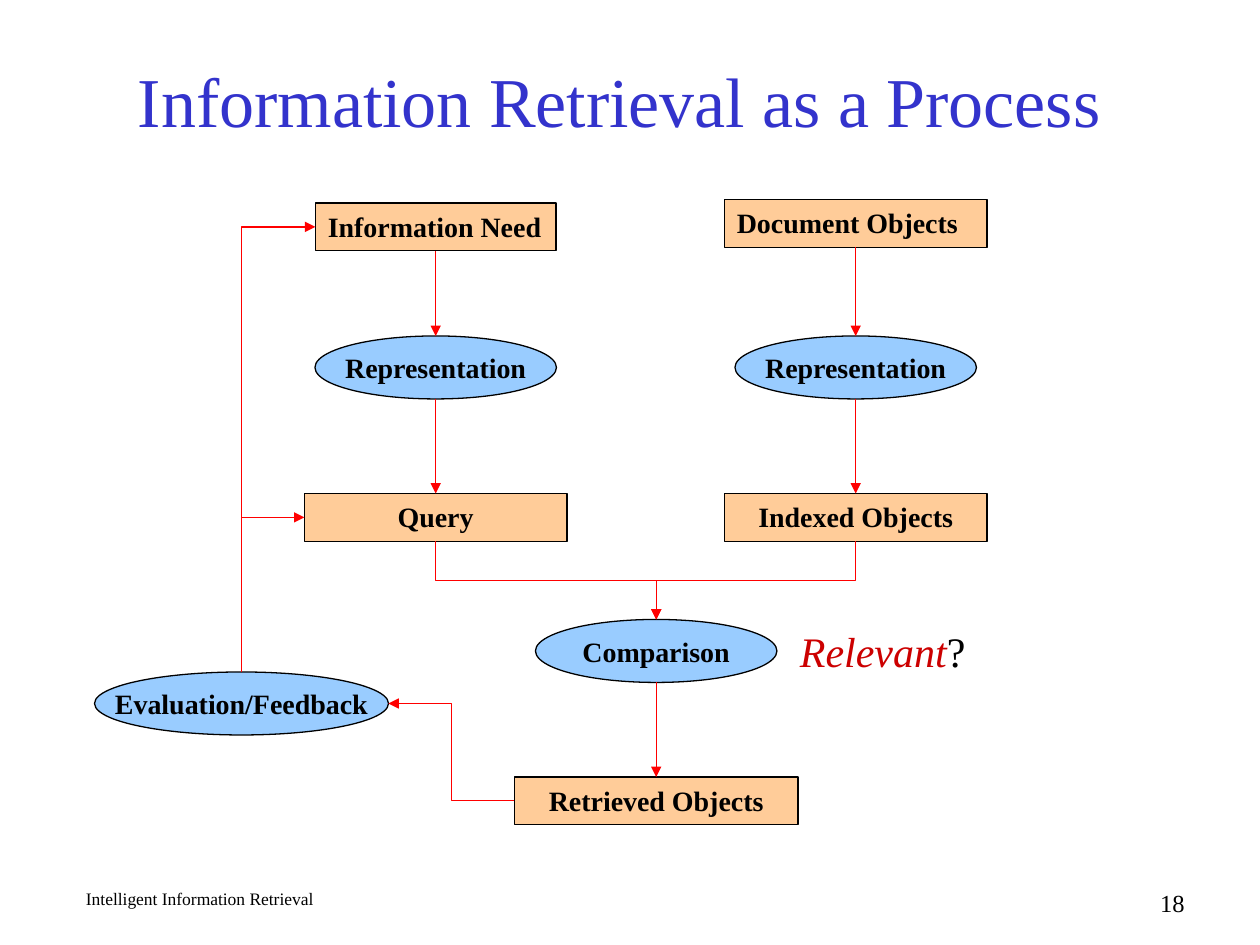
from dataclasses import dataclass
from pptx import Presentation, util as u
from pptx.dml.color import RGBColor
from pptx.enum import shapes as es, text as et
from pptx.oxml.ns import qn
from lxml import etree

Pt = u.Pt
LEFT, MID, RIGHT = et.PP_ALIGN.LEFT, et.PP_ALIGN.CENTER, et.PP_ALIGN.RIGHT


@dataclass(frozen=True)
class Theme:
    font: str = "Times New Roman"
    ink: str = "000000"
    head: str = "3333CC"
    box: str = "FFCC99"
    oval: str = "99CCFF"
    line: str = "FF0000"
    key: str = "CC0000"
    big: int = 40
    note: int = 24
    label: int = 16
    page: int = 14
    foot: int = 10
    edge: float = 0.75


T = Theme()


def rgb(code):
    return RGBColor.from_string(code)


def write(shape, runs, size=T.label, color=T.ink, bold=False, align=LEFT,
          anchor=et.MSO_ANCHOR.TOP, wrap=True):
    frame = shape.text_frame
    frame.word_wrap = wrap
    frame.vertical_anchor = anchor
    para = frame.paragraphs[0]
    para.alignment = align
    if isinstance(runs, str):
        runs = [(runs, color, False)]
    for words, tint, slant in runs:
        run = para.add_run()
        run.text = words
        font = run.font
        font.name, font.size = T.font, Pt(size)
        font.bold, font.italic = bold, slant
        font.color.rgb = rgb(tint)


def label(slide, runs, x, y, w, h, **form):
    write(slide.shapes.add_textbox(Pt(x), Pt(y), Pt(w), Pt(h)), runs, **form)


def node(slide, kind, words, fill, mid, y, w, h, **form):
    shape = slide.shapes.add_shape(kind, Pt(mid - w / 2), Pt(y), Pt(w), Pt(h))
    shape.shadow.inherit = False
    shape.fill.solid()
    shape.fill.fore_color.rgb = rgb(fill)
    shape.line.color.rgb = rgb(T.ink)
    shape.line.width = Pt(T.edge)
    write(shape, words, bold=True, **form)
    return shape


def box(slide, words, mid, y, w=150, align=MID):
    return node(slide, es.MSO_SHAPE.RECTANGLE, words, T.box, mid, y, w, 27.3,
                align=align)


def oval(slide, words, mid, y, w=138):
    return node(slide, es.MSO_SHAPE.OVAL, words, T.oval, mid, y, w, 36,
                align=MID, anchor=et.MSO_ANCHOR.MIDDLE, wrap=False)


def port(shape, side):
    across, down = {"top": (1, 0), "base": (1, 2),
                    "left": (0, 1), "right": (2, 1)}[side]
    return (shape.left + shape.width * across // 2,
            shape.top + shape.height * down // 2)


def stand(link, start, end):
    (x1, y1), (x2, y2) = start, end
    wide, tall = abs(y2 - y1), abs(x2 - x1)
    link.left, link.top = (x1 + x2 - wide) // 2, (y1 + y2 - tall) // 2
    link.width, link.height = wide, tall
    frame = link._element.spPr.find(qn("a:xfrm"))
    for flip in ("flipH", "flipV"):
        frame.attrib.pop(flip, None)
    turn = 270 if x2 > x1 else 90
    frame.set("rot", str(turn * 60000))
    if (y2 > y1) == (turn == 270):
        frame.set("flipH", "1")


def arrow(slide, tail, out, head, into, bent=False):
    start, end = port(tail, out), port(head, into)
    kind = es.MSO_CONNECTOR.ELBOW if bent else es.MSO_CONNECTOR.STRAIGHT
    link = slide.shapes.add_connector(kind, *start, *end)
    link.line.color.rgb = rgb(T.line)
    link.line.width = Pt(T.edge)
    props = link._element.spPr
    if bent and out in ("top", "base"):
        stand(link, start, end)
        if into == "left":
            props.find(qn("a:prstGeom")).set("prst", "bentConnector2")
    etree.SubElement(props.find(qn("a:ln")), qn("a:tailEnd"), type="triangle")
    etree.SubElement(props, qn("a:effectLst"))


def title(slide, words):
    shape = slide.shapes.title
    shape.left, shape.top, shape.width, shape.height = map(
        Pt, (48, 12, 612, 90))
    write(shape, words, size=T.big, color=T.head, align=MID,
          anchor=et.MSO_ANCHOR.MIDDLE)


def main():
    deck = Presentation()
    deck.slide_width, deck.slide_height = Pt(720), Pt(540)
    slide = deck.slides.add_slide(deck.slide_layouts[5])
    title(slide, "Information Retrieval as a Process")
    label(slide, "Intelligent Information Retrieval", 42, 504, 270, 18,
          size=T.foot)
    label(slide, "18", 534, 504, 150, 18, size=T.page, align=RIGHT)

    ask, store, match = 249, 489, 375
    need = box(slide, "Information Need", ask, 116, w=137.5, align=LEFT)
    docs = box(slide, "Document Objects", store, 114, align=LEFT)
    query = box(slide, "Query", ask, 282)
    index = box(slide, "Indexed Objects", store, 282)
    found = box(slide, "Retrieved Objects", match, 444, w=162)
    form, model = (oval(slide, "Representation", mid, 192)
                   for mid in (ask, store))
    test = oval(slide, "Comparison", match, 354)
    judge = oval(slide, "Evaluation/Feedback", 138, 384, w=168)

    for tail, head in ((need, form), (form, query), (docs, model),
                       (model, index), (test, found)):
        arrow(slide, tail, "base", head, "top")
    for tail in (query, index):
        arrow(slide, tail, "base", test, "top", bent=True)
    arrow(slide, found, "left", judge, "right", bent=True)
    for head in (query, need):
        arrow(slide, judge, "top", head, "left", bent=True)

    label(slide, [("Relevant", T.key, True), ("?", T.ink, False)],
          450, 354, 109, 36, size=T.note, wrap=False)
    deck.save("out.pptx")


if __name__ == "__main__":
    main()
